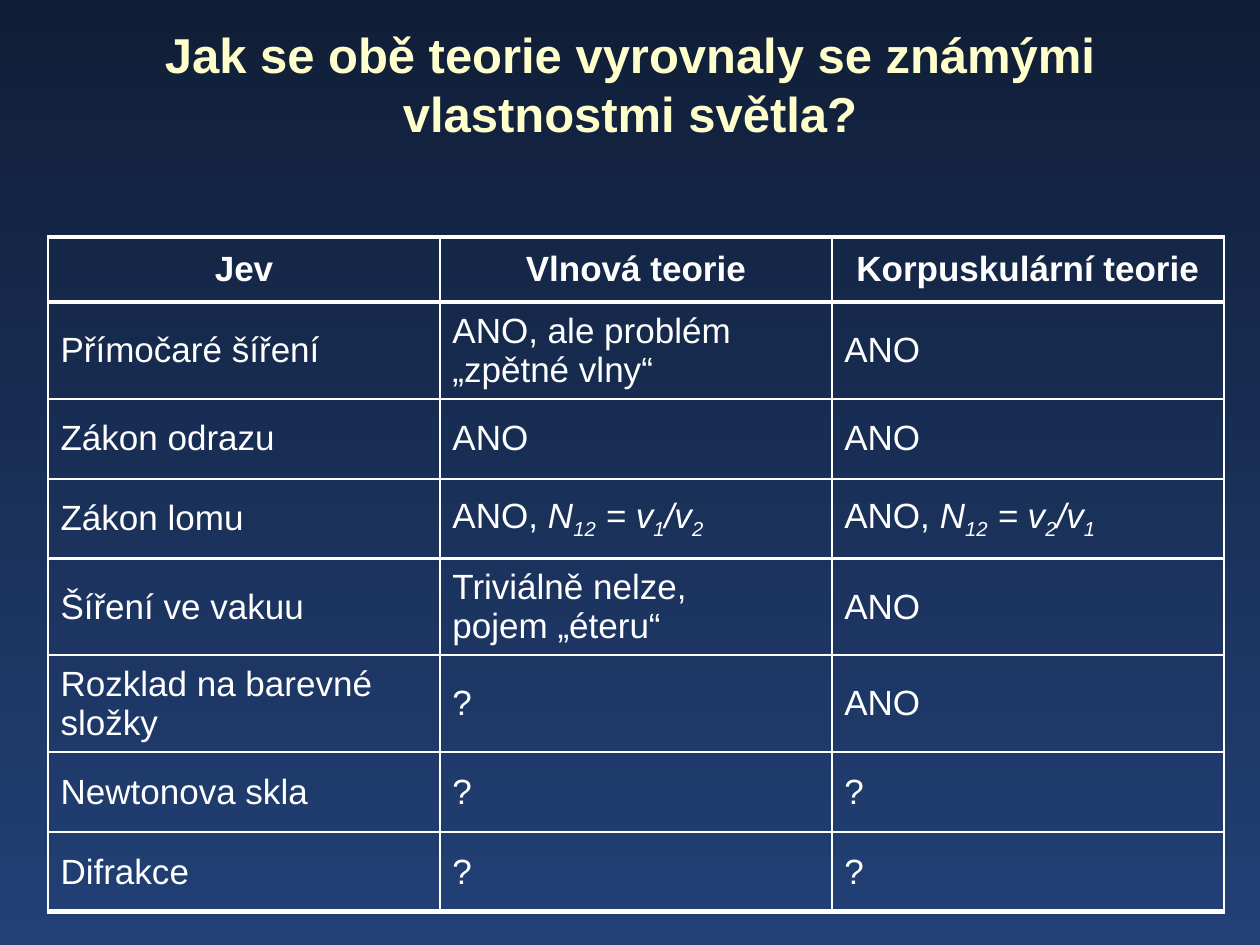
from lxml import etree
from pptx import Presentation
from pptx import util as u
from pptx.dml.color import RGBColor
from pptx.enum import text
from pptx.oxml import ns

NIGHT = RGBColor(0x10, 0x1E, 0x37)
BLUE = RGBColor(0x22, 0x40, 0x76)
WHITE = RGBColor(0xFF, 0xFF, 0xFF)
CREAM = RGBColor(0xFF, 0xFF, 0xCC)

THIN, THICK = 1.5, 3
SHORT_ROW, TALL_ROW, HEADER_ROW = 1.61, 1.95, 1.31


def refraction(upper, lower):
    return [("ANO, ", False, False), ("N", True, False), ("12", True, True),
            (" = v", True, False), (upper, True, True),
            ("/v", True, False), (lower, True, True)]


THEORIES = [
    (HEADER_ROW, "Jev", "Vlnová teorie", "Korpuskulární teorie"),
    (TALL_ROW, "Přímočaré šíření", "ANO, ale problém „zpětné vlny“", "ANO"),
    (SHORT_ROW, "Zákon odrazu", "ANO", "ANO"),
    (SHORT_ROW, "Zákon lomu", refraction("1", "2"), refraction("2", "1")),
    (TALL_ROW, "Šíření ve vakuu", "Triviálně nelze,\vpojem „éteru“", "ANO"),
    (TALL_ROW, "Rozklad na barevné složky", "?", "ANO"),
    (SHORT_ROW, "Newtonova skla", "?", "?"),
    (SHORT_ROW, "Difrakce", "?", "?"),
]


class Deck:
    font_name = "Arial"

    def __init__(self, width, height):
        self.presentation = Presentation()
        self.presentation.slide_width = u.Cm(width)
        self.presentation.slide_height = u.Cm(height)
        self.slide = self.presentation.slides.add_slide(
            self.presentation.slide_layouts[6])

    def background(self, top, bottom):
        fill = self.slide.background.fill
        fill.gradient()
        fill.gradient_angle = 270
        for stop, color in zip(fill.gradient_stops, (top, bottom)):
            stop.color.rgb = color

    def style(self, paragraph, size, color, bold, align):
        paragraph.alignment = align
        font = paragraph.font
        font.name, font.size, font.bold = self.font_name, u.Pt(size), bold
        font.color.rgb = color

    def title(self, wording, left, top, width, height):
        frame = self.slide.shapes.add_textbox(
            u.Cm(left), u.Cm(top), u.Cm(width), u.Cm(height)).text_frame
        frame.word_wrap = True
        frame.vertical_anchor = text.MSO_ANCHOR.MIDDLE
        frame.text = wording
        self.style(frame.paragraphs[0], 28, CREAM, True, text.PP_ALIGN.CENTER)

    def border(self, cell, side, points):
        line = etree.SubElement(cell._tc.get_or_add_tcPr(), ns.qn(f"a:ln{side}"),
                                w=str(u.Pt(points)))
        solid = etree.SubElement(line, ns.qn("a:solidFill"))
        etree.SubElement(solid, ns.qn("a:srgbClr"), val=str(WHITE))

    def cell(self, cell, content, header, last):
        cell.vertical_anchor = text.MSO_ANCHOR.MIDDLE
        cell.margin_left = cell.margin_right = u.Cm(0.13 if header else 0.25)
        cell.margin_top = cell.margin_bottom = u.Cm(0.13)
        paragraph = cell.text_frame.paragraphs[0]
        if isinstance(content, str):
            paragraph.text = content
        else:
            for wording, italic, subscript in content:
                run = paragraph.add_run()
                run.text = wording
                run.font.italic = italic
                if subscript:
                    run.font._element.set("baseline", "-25000")
        align = text.PP_ALIGN.CENTER if header else text.PP_ALIGN.LEFT
        self.style(paragraph, 20, WHITE, header, align)
        above, below = header, header or last
        for side, thick in (("L", False), ("R", False), ("T", above), ("B", below)):
            self.border(cell, side, THICK if thick else THIN)
        cell.fill.background()

    def table(self, rows, left, top, column_width):
        columns = len(rows[0]) - 1
        table = self.slide.shapes.add_table(
            len(rows), columns, u.Cm(left), u.Cm(top),
            u.Cm(column_width * columns), u.Cm(sum(row[0] for row in rows))).table
        table.first_row = table.horz_banding = False
        for column in table.columns:
            column.width = u.Cm(column_width)
        for index, (height, *contents) in enumerate(rows):
            table.rows[index].height = u.Cm(height)
            for position, content in enumerate(contents):
                self.cell(table.cell(index, position), content,
                          header=index == 0, last=index == len(rows) - 1)


def main():
    deck = Deck(25.4, 19.05)
    deck.background(NIGHT, BLUE)
    deck.table(THEORIES, left=0.97, top=4.78, column_width=7.9)
    deck.title("Jak se obě teorie vyrovnaly se známými vlastnostmi světla?",
               left=1.9, top=0.64, width=21.6, height=2.1)
    deck.presentation.save("out.pptx")


if __name__ == "__main__":
    main()
